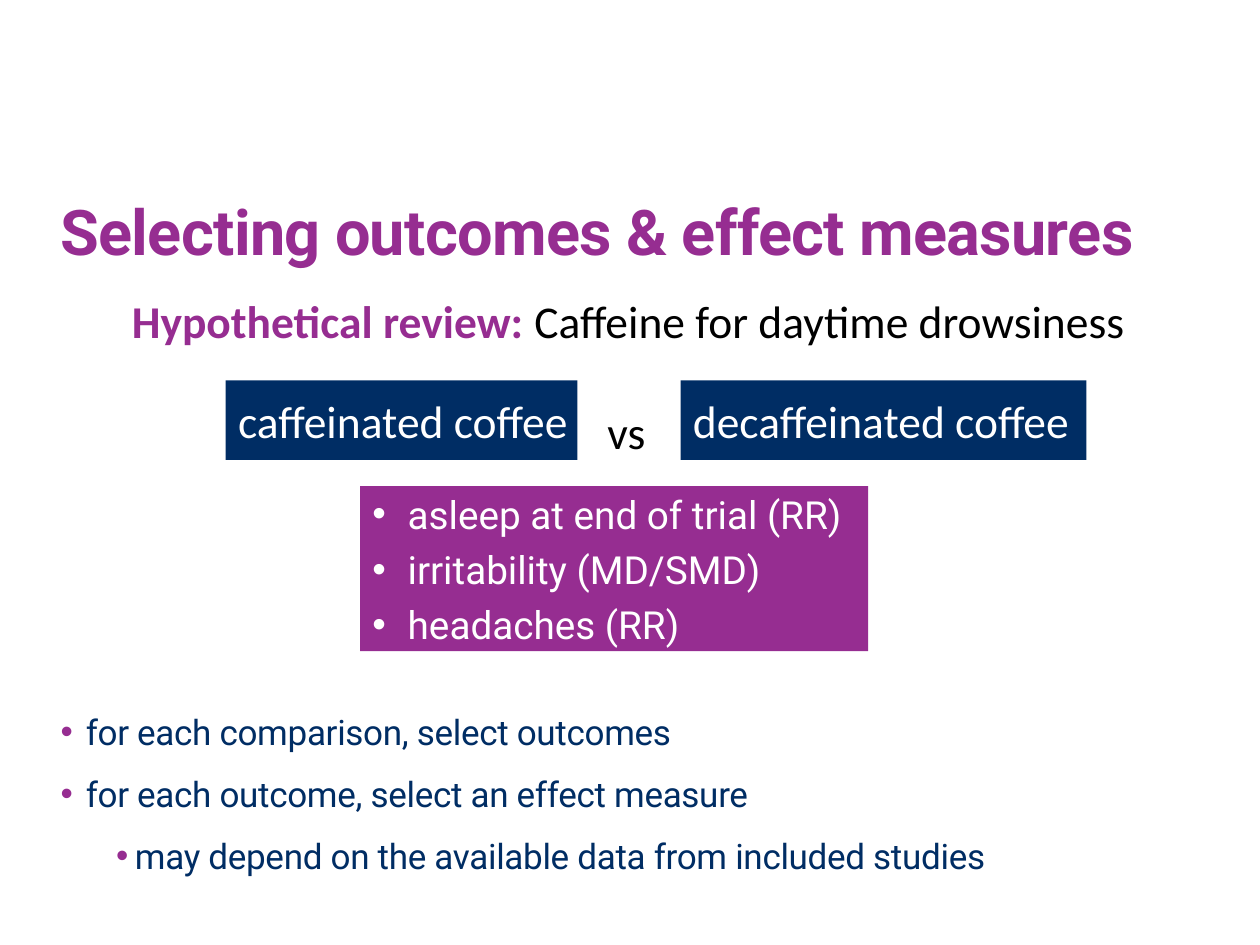
from dataclasses import dataclass

from lxml import etree
from pptx import Presentation
from pptx.dml.color import RGBColor
from pptx.enum.shapes import MSO_SHAPE
from pptx.enum.text import MSO_ANCHOR, MSO_AUTO_SIZE, PP_ALIGN
from pptx.oxml.ns import qn
from pptx.util import Cm, Pt

RECTANGLE = MSO_SHAPE.RECTANGLE
TOP, MIDDLE, BOTTOM = MSO_ANCHOR.TOP, MSO_ANCHOR.MIDDLE, MSO_ANCHOR.BOTTOM
LEFT, CENTER = PP_ALIGN.LEFT, PP_ALIGN.CENTER
NO_AUTOFIT = MSO_AUTO_SIZE.NONE
TITLE_AND_CONTENT = 1


@dataclass(frozen=True)
class Theme:
    purple: str = "962D91"
    navy: str = "002D64"
    black: str = "000000"
    white: str = "FFFFFF"
    heading_font: str = "Roboto"
    label_font: str = "Calibri"
    title_size: float = 36
    label_size: float = 26
    outcome_size: float = 22.1
    body_size: float = 20


class SlideBuilder:
    def __init__(self, slide, theme):
        self.slide = slide
        self.theme = theme

    def style(self, run, font_name, size, color, bold=False, spacing=0):
        """Format one run; spacing is the letter spacing in points."""
        run.font.name = font_name
        run.font.size = Pt(size)
        run.font.bold = bold
        run.font.color.rgb = RGBColor.from_string(color)
        if spacing:
            run.font._element.set("spc", str(round(spacing * 100)))

    def bullet(self, paragraph, color, indent, hanging):
        properties = paragraph._p.get_or_add_pPr()
        properties.set("marL", str(Cm(indent)))
        properties.set("indent", str(-Cm(hanging)))
        bullet_color = etree.SubElement(properties, qn("a:buClr"))
        etree.SubElement(bullet_color, qn("a:srgbClr"), val=color)
        etree.SubElement(properties, qn("a:buFont"), typeface="Arial")
        etree.SubElement(properties, qn("a:buChar"), char="•")

    def place(self, placeholder, left, top, width, height, anchor):
        placeholder.left, placeholder.top = Cm(left), Cm(top)
        placeholder.width, placeholder.height = Cm(width), Cm(height)
        frame = placeholder.text_frame
        frame.margin_left = frame.margin_right = 0
        frame.margin_top = frame.margin_bottom = 0
        frame.vertical_anchor = anchor
        frame.auto_size = NO_AUTOFIT
        return frame

    def title(self, text, *box):
        frame = self.place(self.slide.shapes.title, *box, BOTTOM)
        frame.text = text
        paragraph = frame.paragraphs[0]
        paragraph.alignment = LEFT
        self.style(paragraph.runs[0], self.theme.heading_font, self.theme.title_size,
                   self.theme.purple, bold=True, spacing=-0.4)

    def body(self, items, *box):
        """Fill the body placeholder with (level, text) items."""
        frame = self.place(self.slide.placeholders[1], *box, TOP)
        frame.text = "\n".join(text for _, text in items)
        indents = {0: (0.51, 0.51), 1: (1.5, 0.38)}
        for number, (paragraph, (level, _)) in enumerate(zip(frame.paragraphs, items)):
            paragraph.level = level
            self.bullet(paragraph, self.theme.purple, *indents[level])
            paragraph.space_before = Pt(11.3 if number else 0)
            self.style(paragraph.runs[0], self.theme.heading_font, self.theme.body_size,
                       self.theme.navy, spacing=-0.2)

    def rectangle(self, text, fill, left, top, width, height):
        shape = self.slide.shapes.add_shape(
            RECTANGLE, Cm(left), Cm(top), Cm(width), Cm(height))
        shape.shadow.inherit = False
        shape.fill.solid()
        shape.fill.fore_color.rgb = RGBColor.from_string(fill)
        shape.line.fill.background()
        frame = shape.text_frame
        frame.vertical_anchor = MIDDLE
        frame.text = text
        for paragraph in frame.paragraphs:
            paragraph.alignment = LEFT
        return frame

    def outcome_list(self, outcomes, *box):
        frame = self.rectangle("\n".join(outcomes), self.theme.purple, *box)
        for number, paragraph in enumerate(frame.paragraphs):
            self.bullet(paragraph, self.theme.white, 0.71, 0.71)
            paragraph.space_before = Pt(5 if number else 0)
            self.style(paragraph.runs[0], self.theme.heading_font,
                       self.theme.outcome_size, self.theme.white)

    def intervention(self, text, *box):
        frame = self.rectangle(text, self.theme.navy, *box)
        frame.word_wrap = False
        self.style(frame.paragraphs[0].runs[0], self.theme.label_font,
                   self.theme.label_size, self.theme.white)

    def review(self, label, topic, versus, left, top, width, height):
        """Write the review question, with the comparison word centred below it."""
        theme = self.theme
        text_box = self.slide.shapes.add_textbox(Cm(left), Cm(top), Cm(width), Cm(height))
        frame = text_box.text_frame
        frame.word_wrap = True
        question = frame.paragraphs[0]
        question._p.get_or_add_pPr().set("marL", str(Cm(0.23)))
        for text, color, bold in ((label, theme.purple, True), (topic, theme.black, False)):
            run = question.add_run()
            run.text = text
            self.style(run, theme.label_font, theme.label_size, color, bold)
        comparison = frame.add_paragraph()
        comparison.text = versus
        comparison.alignment = CENTER
        comparison.space_before = Pt(32)
        self.style(comparison.runs[0], theme.label_font, theme.label_size, theme.black)


def main():
    presentation = Presentation()
    presentation.slide_width, presentation.slide_height = Cm(25.4), Cm(19.05)
    slide = presentation.slides.add_slide(presentation.slide_layouts[TITLE_AND_CONTENT])
    builder = SlideBuilder(slide, Theme())

    builder.title("Selecting outcomes & effect measures", 1.22, 3.66, 23.37, 1.75)
    builder.body([
        (0, "for each comparison, select outcomes"),
        (0, "for each outcome, select an effect measure"),
        (1, "may depend on the available data from included studies"),
    ], 1.22, 14.33, 24.18, 4.72)
    builder.outcome_list([
        "asleep at end of trial (RR)",
        "irritability (MD/SMD)",
        "headaches (RR)",
    ], 7.26, 9.8, 10.24, 3.33)
    builder.review("Hypothetical review: ", "Caffeine for daytime drowsiness", "vs",
                   2.18, 5.79, 20.9, 3.61)
    for text, left, width in (("caffeinated coffee", 4.55, 7.09),
                              ("decaffeinated coffee", 13.72, 8.18)):
        builder.intervention(text, left, 7.67, width, 1.6)

    presentation.save("out.pptx")


if __name__ == "__main__":
    main()
